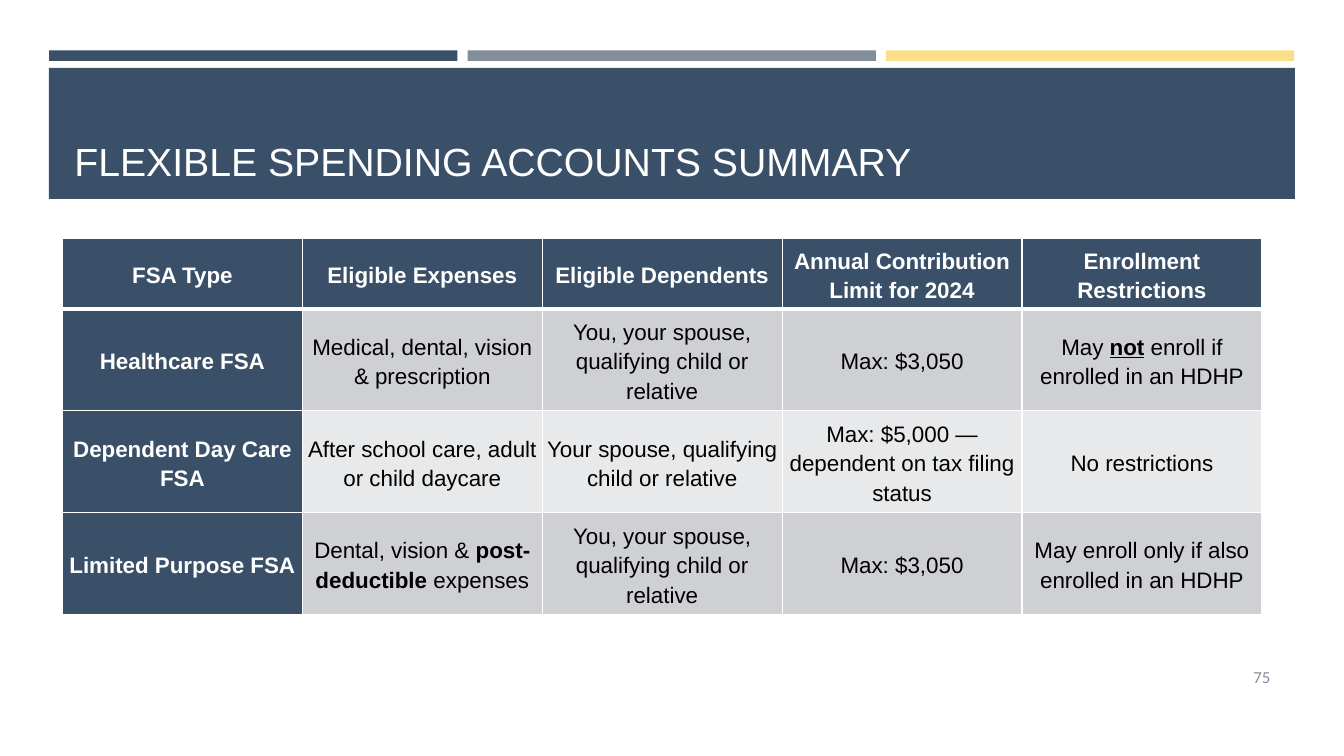
from lxml import etree
from pptx import Presentation
from pptx.dml.color import RGBColor
from pptx.enum.shapes import MSO_SHAPE
from pptx.enum.text import MSO_ANCHOR, PP_ALIGN
from pptx.oxml.ns import qn
from pptx.util import Inches, Pt

RECT = MSO_SHAPE.RECTANGLE
LEFT, CENTER, RIGHT = PP_ALIGN.LEFT, PP_ALIGN.CENTER, PP_ALIGN.RIGHT
MIDDLE, BOTTOM = MSO_ANCHOR.MIDDLE, MSO_ANCHOR.BOTTOM

COLORS = {
    "navy": "3A5068", "gray": "848D9A", "gold": "F8DF88",
    "white": "FFFFFF", "black": "000000",
    "dark": "CED0D4", "light": "E8E9EB",
}

# Asterisks enclose bold words; an underscore after the first one underlines them.
ROWS = [
    ["FSA Type", "Eligible Expenses", "Eligible Dependents",
     "Annual Contribution Limit for 2024", "Enrollment Restrictions"],
    ["Healthcare FSA", "Medical, dental, vision & prescription",
     "You, your spouse, qualifying child or relative", "Max: $3,050",
     "May *_not* enroll if enrolled in an HDHP"],
    ["Dependent Day Care FSA", "After school care, adult or child daycare",
     "Your spouse, qualifying child or relative",
     "Max: $5,000 —dependent on tax filing status", "No restrictions"],
    ["Limited Purpose FSA", "Dental, vision & *post-deductible* expenses",
     "You, your spouse, qualifying child or relative", "Max: $3,050",
     "May enroll only if also enrolled in an HDHP"],
]


def rgb(name):
    return RGBColor.from_string(COLORS[name])


def write(frame, text, size=16, font="Arial", color="black", bold=False,
          align=LEFT, line=None, after=None):
    para = frame.paragraphs[0]
    para.alignment = align
    para.line_spacing = line
    para.space_after = after
    for i, part in enumerate(text.split("*")):
        run = para.add_run()
        run.text = part.lstrip("_")
        run.font.name = font
        run.font.size = Pt(size)
        run.font.bold = bold or i % 2 == 1
        run.font.underline = part.startswith("_")
        run.font.color.rgb = rgb(color)


def edge(cell, side, width):
    line = etree.SubElement(cell._tc.get_or_add_tcPr(), qn(f"a:ln{side}"),
                            w=str(Pt(width)))
    fill = etree.SubElement(line, qn("a:solidFill"))
    etree.SubElement(fill, qn("a:srgbClr"), val=COLORS["white"])


class Deck:
    """Draws on one slide; all lengths are percentages of its size."""

    def __init__(self):
        self.prs = Presentation()
        self.prs.slide_width = Inches(13.33)
        self.prs.slide_height = Inches(7.5)
        self.slide = self.prs.slides.add_slide(self.prs.slide_layouts[6])

    def wide(self, share):
        return round(self.prs.slide_width * share / 100)

    def high(self, share):
        return round(self.prs.slide_height * share / 100)

    def area(self, x, y, w, h):
        return self.wide(x), self.high(y), self.wide(w), self.high(h)

    def bar(self, x, y, w, h, color):
        shape = self.slide.shapes.add_shape(RECT, *self.area(x, y, w, h))
        shape.shadow.inherit = False
        shape.fill.solid()
        shape.fill.fore_color.rgb = rgb(color)
        shape.line.fill.background()

    def label(self, x, y, w, h, text, anchor=MIDDLE, **style):
        frame = self.slide.shapes.add_textbox(*self.area(x, y, w, h)).text_frame
        frame.word_wrap = True
        frame.vertical_anchor = anchor
        write(frame, text, **style)

    def table(self, x, y, w, head, body, rows):
        count = len(rows)
        height = head + body * (count - 1)
        table = self.slide.shapes.add_table(
            count, len(rows[0]), *self.area(x, y, w, height)).table
        for r, texts in enumerate(rows):
            table.rows[r].height = self.high(body if r else head)
            for c, text in enumerate(texts):
                self.cell(table.cell(r, c), r, c, text)

    def cell(self, cell, r, c, text):
        title = r == 0 or c == 0
        cell.margin_left = cell.margin_right = Inches(0.03)
        cell.margin_top = cell.margin_bottom = Inches(0.03)
        cell.vertical_anchor = MIDDLE
        for side in "LRTB":
            thick = (r, side) in ((0, "B"), (1, "T"))
            edge(cell, side, 3 if thick else 1)
        cell.fill.solid()
        cell.fill.fore_color.rgb = rgb(
            "navy" if title else "dark" if r % 2 else "light")
        write(cell.text_frame, text, color="white" if title else "black",
              bold=title, align=CENTER, line=1.19, after=Pt(6))


def main():
    deck = Deck()
    for i, color in enumerate(("navy", "gray", "gold")):
        deck.bar(3.66 + 31.13 * i, 6.67, 30.38, 1.4, color)
    deck.bar(3.64, 8.98, 92.7, 17.33, "navy")
    deck.label(4.8, 10.27, 90.47, 14.8, "FLEXIBLE SPENDING ACCOUNTS SUMMARY",
               anchor=BOTTOM, size=28, color="white")
    deck.table(4.65, 31.6, 89.25, 8.67, 12.6, ROWS)
    deck.label(86.63, 86.8, 8.63, 5.33, "75", size=12, font="Calibri",
               color="gray", align=RIGHT)
    deck.prs.save("out.pptx")


if __name__ == "__main__":
    main()
